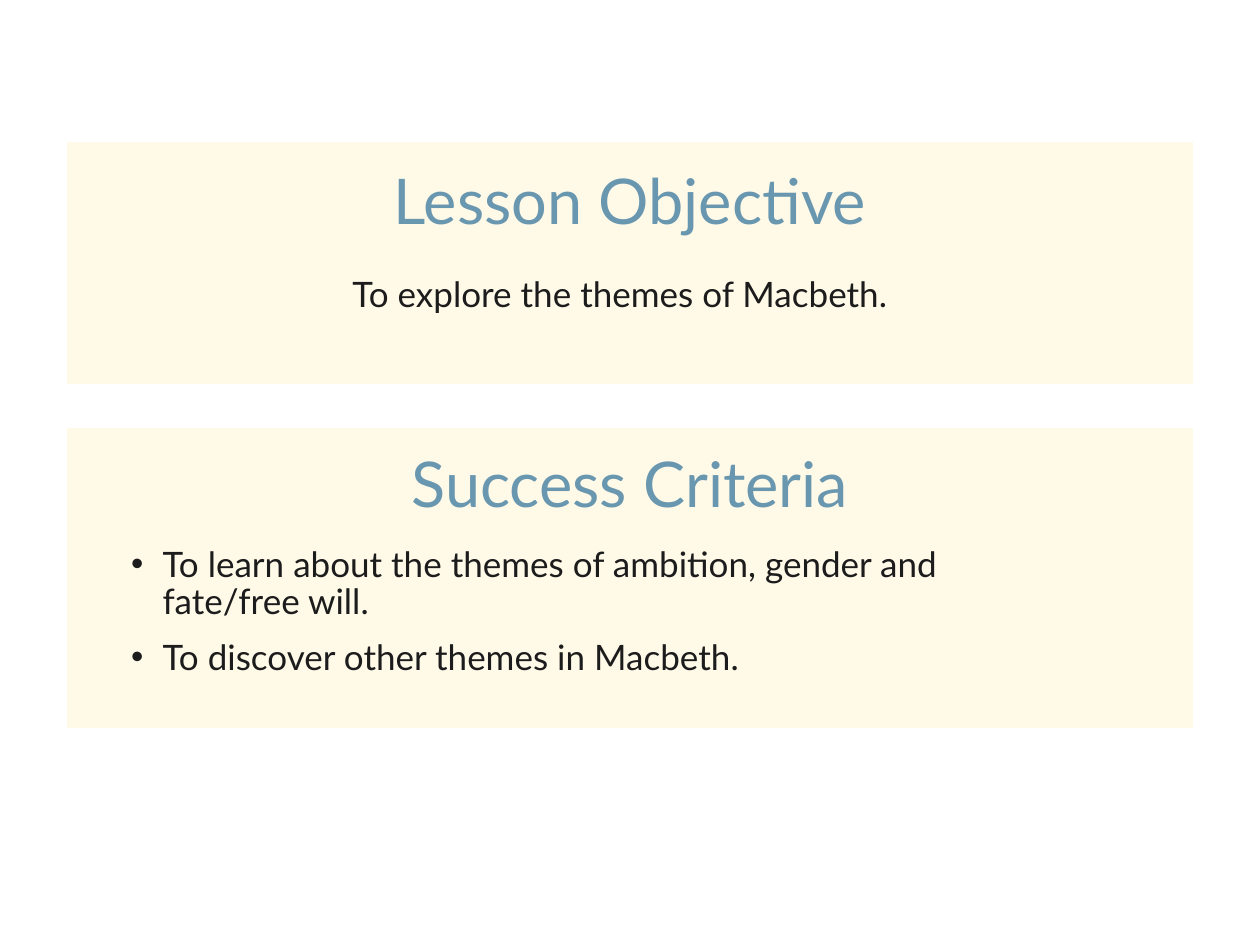
from dataclasses import dataclass

from lxml.etree import SubElement
from pptx import Presentation
from pptx.dml.color import RGBColor
from pptx.enum.shapes import MSO_SHAPE as Shape
from pptx.enum.text import MSO_ANCHOR as Anchor, MSO_AUTO_SIZE as AutoSize, PP_ALIGN as Align
from pptx.oxml.ns import qn
from pptx.util import Inches, Pt

CREAM = RGBColor(0xFF, 0xF9, 0xE7)
WHITE = RGBColor(0xFF, 0xFF, 0xFF)
BLUE = RGBColor(0x69, 0x97, 0xAF)
INK = RGBColor(0x1C, 0x1C, 0x1C)

WIDTH, HEIGHT = 10, 7.5
MARGIN = 0.52
CARD_WIDTH = WIDTH - 2 * MARGIN
HEADING_HEIGHT = 0.76
HEADING_INSETS = (0.28, 0.24, 0.28, 0.2)
BODY_INSETS = (0, 0.08, 0.16, 0.08)


@dataclass
class LessonSlide:
    """Hold the lesson style and the slide on which each element is placed."""

    page: object
    font: str = "Lato"
    heading_size: int = 36
    body_size: int = 20

    def place(self, box, left, top, width, height):
        box.left, box.top = Inches(left), Inches(top)
        box.width, box.height = Inches(width), Inches(height)
        self.page.shapes._spTree.append(box._element)

    def card(self, top, height):
        area = [Inches(value) for value in (MARGIN, top, CARD_WIDTH, height)]
        box = self.page.shapes.add_shape(Shape.ROUNDED_RECTANGLE, *area)
        box.adjustments[0] = 0
        box.shadow.inherit = False
        box.fill.solid()
        box.fill.fore_color.rgb = CREAM
        color = box._element.spPr.find(qn("a:solidFill"))[0]
        SubElement(color, qn("a:alpha"), val="95000")
        box.line.color.rgb = WHITE
        box.line.width = Pt(2)

    def fill_text(self, box, paragraphs, insets, size, color, bullet=False):
        frame = box.text_frame
        frame.word_wrap = True
        frame.auto_size = AutoSize.NONE
        frame.vertical_anchor = Anchor.TOP
        (frame.margin_left, frame.margin_top,
         frame.margin_right, frame.margin_bottom) = map(Inches, insets)
        for index, lines in enumerate(paragraphs):
            para = frame.add_paragraph() if index else frame.paragraphs[0]
            self.mark(para, bullet)
            para.alignment = Align.LEFT if bullet else Align.CENTER
            para.line_spacing = 0.9
            para.space_before = Pt(10 if index else 0)
            for number, line in enumerate(lines):
                if number:
                    para.add_line_break()
                span = para.add_run()
                span.text = line
                span.font.name = self.font
                span.font.size = Pt(size)
                span.font.color.rgb = color

    def mark(self, para, bullet):
        properties = para._p.get_or_add_pPr()
        indent = Inches(0.25) if bullet else 0
        properties.set("marL", str(indent))
        properties.set("indent", str(-indent))
        if bullet:
            SubElement(properties, qn("a:buFont"), typeface="Arial")
            SubElement(properties, qn("a:buChar"), char="•")
        else:
            SubElement(properties, qn("a:buNone"))

    def heading(self, box, text, top):
        self.place(box, MARGIN, top, CARD_WIDTH, HEADING_HEIGHT)
        self.fill_text(box, [[text]], HEADING_INSETS, self.heading_size, BLUE)

    def body(self, box, paragraphs, area, bullet=False):
        self.place(box, *area)
        self.fill_text(box, paragraphs, BODY_INSETS, self.body_size, INK, bullet)


def main():
    deck = Presentation()
    deck.slide_width, deck.slide_height = Inches(WIDTH), Inches(HEIGHT)
    page = deck.slides.add_slide(deck.slide_layouts[3])
    title, objective, criteria = page.placeholders
    lesson = LessonSlide(page)

    lesson.card(1.11, 1.95)
    lesson.card(3.38, 2.41)
    lesson.body(
        criteria,
        [["To learn about the themes of ambition, gender and ", "fate/free will."],
         ["To discover other themes in Macbeth."]],
        (2 * MARGIN, 4.26, 7.93, 1.31),
        bullet=True,
    )
    lesson.body(objective, [["To explore the themes of Macbeth."]], (0.75, 2.12, 8.5, 0.4))
    lesson.heading(title, "Lesson Objective", 1.11)
    lesson.heading(page.shapes.add_textbox(0, 0, 0, 0), "Success Criteria", 3.36)

    deck.save("out.pptx")


if __name__ == "__main__":
    main()
